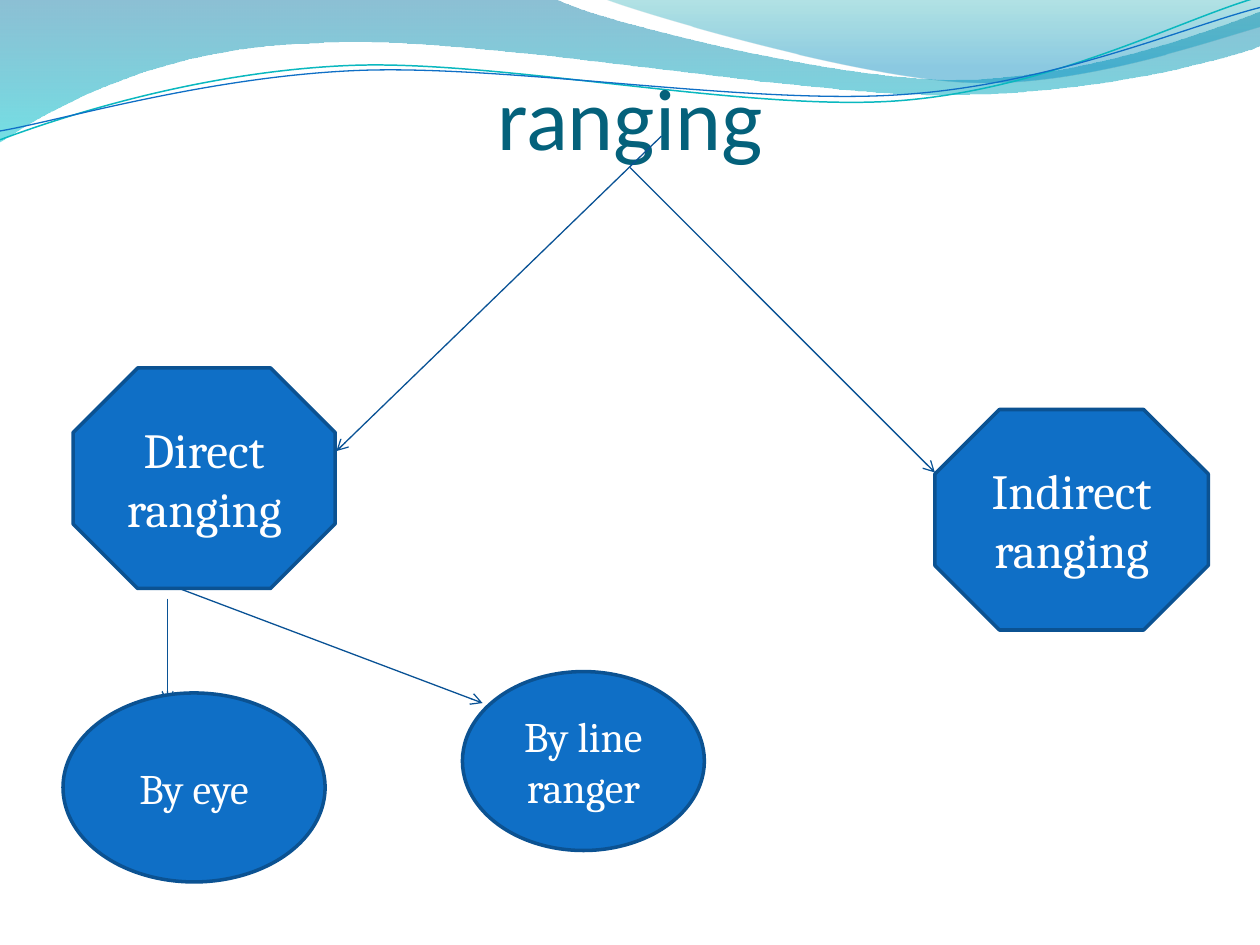
from math import cos, radians, sin

from lxml.etree import SubElement
from pptx import Presentation
from pptx.dml.color import RGBColor
from pptx.enum.shapes import MSO_CONNECTOR, MSO_SHAPE
from pptx.enum.text import MSO_ANCHOR, PP_ALIGN
from pptx.oxml.ns import qn
from pptx.util import Inches, Pt

COLORS = {
    "title": "04617B", "node": "0F6FC6", "outline": "0B5292",
    "arrow": "095295", "teal": "0AB8BF", "white": "FFFFFF",
    "band top": "0074A1", "band bottom": "00C6CF",
    "corner top": "00A1A9", "corner bottom": "008BBF",
}
STRAND_TILT = -2.7

# Each wave is a start point, then corners (x, y) or curves (x1, y1, x2, y2, x, y).
# A band adds gradient stops: position, colour, opacity in percent.
BANDS = [
    ([(0, 0), (4.4, -0.01), (4.76, 0.17, 6.64, 0.63, 7.58, 0.63),
      (8.53, 0.63, 9.58, 0.26, 10, 0.09), (10.01, 0.36),
      (9.83, 0.44, 8.7, 0.76, 7.46, 0.75), (6.22, 0.75, 3.82, 0.28, 2.57, 0.34),
      (1.29, 0.36, 0.46, 0.83, -0.01, 1.13)],
     [(0, "band top", 45), (1, "band bottom", 55)]),
    ([(4.79, -0.01), (5.09, 0.11, 6.82, 0.62, 7.69, 0.65),
      (8.56, 0.69, 9.61, 0.32, 10, 0.21), (10, 0)],
     [(0, "corner top", 30), (0.8, "corner bottom", 45)]),
]
# A strand adds its centre, colour and line width.
STRANDS = [
    ([(0, 1.11), (0.48, 0.93, 1.58, 0.57, 2.77, 0.52),
      (3.95, 0.47, 5.93, 0.89, 7.13, 0.8), (8.33, 0.71, 9.38, 0.15, 9.98, -0.02)],
     (4.99, 0.57), "teal", 0.85),
    ([(0, 1.04), (0.47, 0.96, 1.64, 0.61, 2.83, 0.56),
      (4.03, 0.51, 5.97, 0.84, 7.17, 0.75), (8.36, 0.67, 9.41, 0.21, 10, 0.06)],
     (5, 0.59), "node", 0.75),
]


def color(name):
    return RGBColor.from_string(COLORS[name])


def pairs(segment):
    return list(zip(segment[::2], segment[1::2]))


def level(segments, center):
    """Turn the points about the center so that the strand's tilt is undone."""
    angle = radians(-STRAND_TILT)
    leveled = []
    for segment in segments:
        turned = []
        for x, y in pairs(segment):
            across, down = x - center[0], y - center[1]
            turned += [center[0] + across * cos(angle) - down * sin(angle),
                       center[1] + across * sin(angle) + down * cos(angle)]
        leveled.append(turned)
    return leveled


def add_wave(slide, segments, close):
    """Build an outline through the end points, then bend its curved parts."""
    ends = [(Inches(segment[-2]), Inches(segment[-1])) for segment in segments]
    builder = slide.shapes.build_freeform(*ends[0])
    builder.add_line_segments(ends[1:], close=close)
    shape = builder.convert_to_shape()
    shape.shadow.inherit = False
    straight_parts = list(shape.element.iter(qn("a:lnTo")))
    for part, segment in zip(straight_parts, segments[1:]):
        if len(segment) == 2:
            continue
        curve = part.getparent().makeelement(qn("a:cubicBezTo"))
        for x, y in pairs(segment):
            SubElement(curve, qn("a:pt"), x=str(Inches(x) - shape.left),
                       y=str(Inches(y) - shape.top))
        part.getparent().replace(part, curve)
    return shape


def add_header_waves(slide):
    for segments, stops in BANDS:
        shape = add_wave(slide, segments, True)
        shape.line.fill.background()
        shape.fill.gradient()
        shape.fill.gradient_angle = 270
        for stop, (position, name, _) in zip(shape.fill.gradient_stops, stops):
            stop.position = position
            stop.color.rgb = color(name)
        for element, (_, _, opacity) in zip(shape.element.iter(qn("a:srgbClr")), stops):
            SubElement(element, qn("a:alpha"), val=str(opacity * 1000))
    for segments, center, name, width in STRANDS:
        shape = add_wave(slide, level(segments, center), False)
        shape.rotation = STRAND_TILT
        shape.fill.background()
        shape.line.color.rgb = color(name)
        shape.line.width = Pt(width)


def add_text(paragraph, text, font_name, size, color_name):
    paragraph.alignment = PP_ALIGN.CENTER
    run = paragraph.add_run()
    run.text = text
    run.font.name = font_name
    run.font.size = Pt(size)
    run.font.color.rgb = color(color_name)


def place_title(slide, text, left, top, width, height):
    title = slide.shapes.title
    title.left, title.top = Inches(left), Inches(top)
    title.width, title.height = Inches(width), Inches(height)
    frame = title.text_frame
    frame.vertical_anchor = MSO_ANCHOR.BOTTOM
    frame.margin_left = frame.margin_right = frame.margin_bottom = 0
    frame.margin_top = Inches(0.05)
    add_text(frame.paragraphs[0], text, "Calibri", 50, "title")
    title.element.getparent().append(title.element)  # in front of the waves


def add_node(slide, kind, text, size, left, top, width, height):
    shape = slide.shapes.add_shape(
        kind, Inches(left), Inches(top), Inches(width), Inches(height))
    shape.shadow.inherit = False
    shape.fill.solid()
    shape.fill.fore_color.rgb = color("node")
    shape.line.color.rgb = color("outline")
    shape.line.width = Pt(2)
    frame = shape.text_frame
    frame.word_wrap = True
    frame.vertical_anchor = MSO_ANCHOR.MIDDLE
    add_text(frame.paragraphs[0], text, "Cambria", size, "white")


def add_arrow(slide, *ends):
    arrow = slide.shapes.add_connector(MSO_CONNECTOR.STRAIGHT, *map(Inches, ends))
    arrow.line.color.rgb = color("arrow")
    arrow.line.width = Pt(0.75)
    line = arrow.element.spPr.find(qn("a:ln"))
    SubElement(line, qn("a:tailEnd"), type="arrow")
    SubElement(arrow.element.spPr, qn("a:effectLst"))


def add_ranging_types(slide):
    add_arrow(slide, 5, 1.33, 7.42, 3.75)
    add_arrow(slide, 5.25, 1.08, 2.67, 3.58)
    add_node(slide, MSO_SHAPE.OCTAGON, "Direct ranging", 28, 0.58, 2.92, 2.08, 1.75)
    add_node(slide, MSO_SHAPE.OCTAGON, "Indirect ranging", 28, 7.42, 3.25, 2.17, 1.75)


def add_direct_methods(slide):
    add_arrow(slide, 1.42, 4.67, 3.83, 5.58)
    add_arrow(slide, 1.33, 4.75, 1.33, 5.58)
    add_node(slide, MSO_SHAPE.OVAL, "By eye", 24, 0.5, 5.5, 2.08, 1.5)
    add_node(slide, MSO_SHAPE.OVAL, "By line ranger", 24, 3.67, 5.33, 1.92, 1.42)


def main():
    presentation = Presentation()
    presentation.slide_width, presentation.slide_height = Inches(10), Inches(7.5)
    slide = presentation.slides.add_slide(presentation.slide_layouts[5])
    add_header_waves(slide)
    place_title(slide, "ranging", 0.5, 0.33, 9, 1)
    add_ranging_types(slide)
    add_direct_methods(slide)
    presentation.save("out.pptx")


if __name__ == "__main__":
    main()
